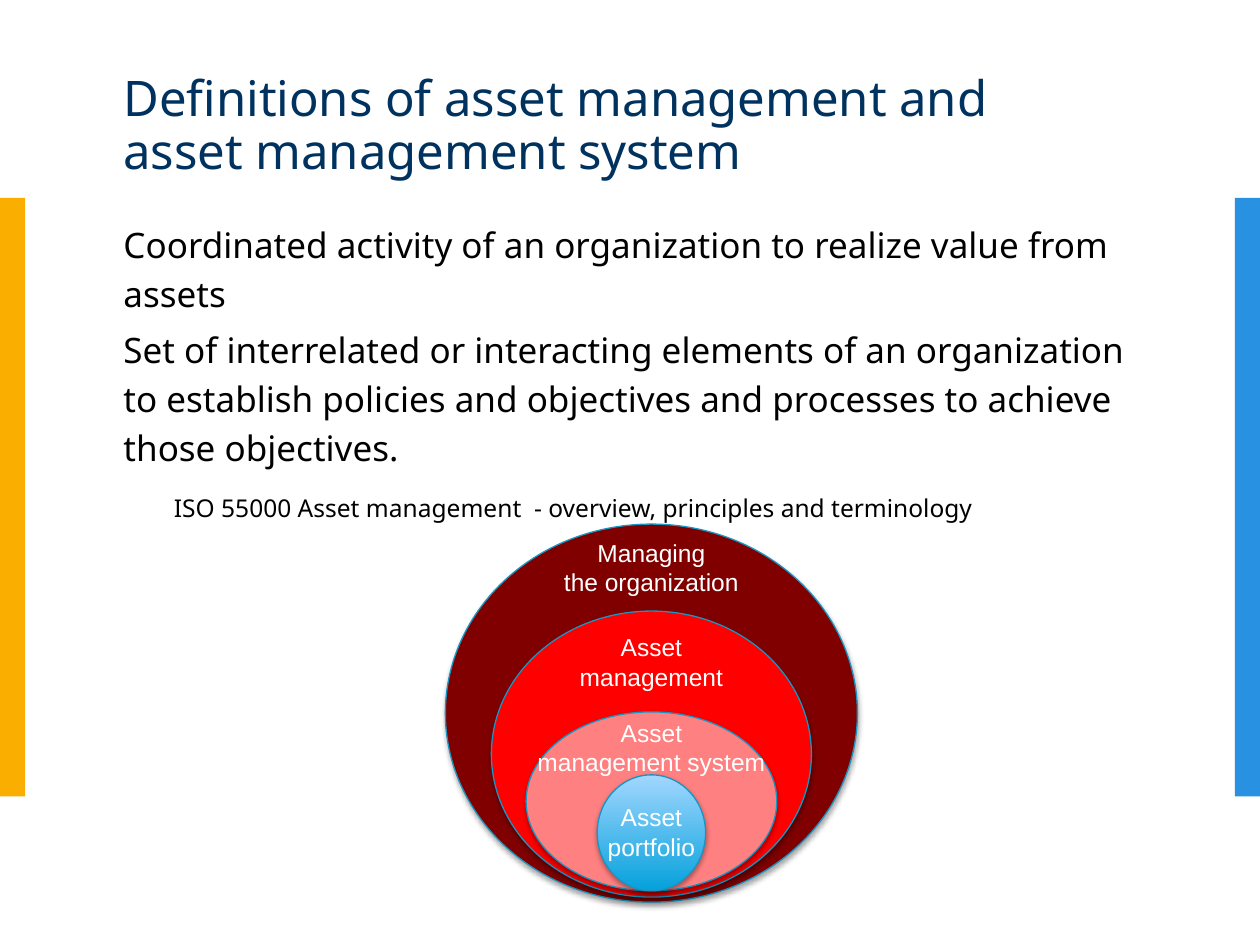
from lxml import etree
from pptx import Presentation
from pptx.dml.color import RGBColor
from pptx.enum.shapes import MSO_SHAPE
from pptx.enum.text import MSO_ANCHOR, MSO_AUTO_SIZE, PP_ALIGN
from pptx.oxml.ns import qn
from pptx.util import Inches, Pt

RECT, OVAL = MSO_SHAPE.RECTANGLE, MSO_SHAPE.OVAL
TOP, NO_FIT = MSO_ANCHOR.TOP, MSO_AUTO_SIZE.NONE
LEFT, CENTER = PP_ALIGN.LEFT, PP_ALIGN.CENTER

THEME = {
    "font": "Noto Sans", "label_font": "Arial",
    "title": "00325F", "body": "000000", "label": "FFFFFF",
    "outline": "1995C3", "shadow": "000000",
    "title_size": 28, "body_size": 20, "small_size": 14,
}
W, H = 10, 7.5
MARGIN = 0.98
BAR_W, BAR_TOP, BAR_H = 0.2, 1.57, 4.75
CENTER_X = 5.17
LABEL_H = 0.57

TITLE = ["Definitions of asset management and", "asset management system"]
BODY = [
    ("Coordinated activity of an organization to realize value from assets", 0),
    ("Set of interrelated or interacting elements of an organization to establish "
     "policies and objectives and processes to achieve those objectives.", 0),
    ("ISO 55000 Asset management  - overview, principles and terminology", 1),
]
BARS = [(0, "FAAF00"), (W - BAR_W, "2891E1")]
RINGS = [
    (4.16, 3.27, 3, ["800000"]),
    (4.85, 2.54, 2.27, ["FF0000"]),
    (5.65, 1.99, 1.42, ["FF8080"]),
    (6.15, 0.86, 0.92, ["05A1DC", "A2D7FF"]),
]
LABELS = [
    (4.22, 1.68, ["Managing", "the organization"]),
    (4.97, 1.42, ["Asset", "management"]),
    (5.65, 2.19, ["Asset", "management system"]),
    (6.32, 1.28, ["Asset", "portfolio"]),
]


def rgb(name):
    return RGBColor.from_string(THEME.get(name, name))


def box(*lengths):
    return [Inches(v) for v in lengths]


def place(sp, *lengths):
    sp.left, sp.top, sp.width, sp.height = box(*lengths)
    tf = sp.text_frame
    tf.margin_left = tf.margin_right = tf.margin_top = tf.margin_bottom = 0
    tf.word_wrap, tf.auto_size, tf.vertical_anchor = True, NO_FIT, TOP
    return tf


def write(p, lines, font, size, color, align):
    p.alignment = align
    for i, line in enumerate(lines):
        if i:
            p.add_line_break()
        r = p.add_run()
        r.text = line
        r.font.name, r.font.size = font, Pt(size)
        r.font.color.rgb = rgb(color)


def add_shape(s, kind, lengths, colors):
    sp = s.shapes.add_shape(kind, *box(*lengths))
    sp.shadow.inherit = False
    if len(colors) == 1:
        sp.fill.solid()
        sp.fill.fore_color.rgb = rgb(colors[0])
    else:
        sp.fill.gradient()
        sp.fill.gradient_angle = 90
        for stop, color in zip(sp.fill.gradient_stops, colors):
            stop.color.rgb = rgb(color)
    sp.line.fill.background()
    return sp


def add_shadow(sp):
    effects = sp._element.spPr.find(qn("a:effectLst"))
    shadow = etree.SubElement(effects, qn("a:outerShdw"), blurRad=str(Pt(3.1)),
                              dist=str(Pt(1.8)), dir="5400000", rotWithShape="0")
    color = etree.SubElement(shadow, qn("a:srgbClr"), val=THEME["shadow"])
    etree.SubElement(color, qn("a:alpha"), val="35000")


def add_body(tf):
    for i, (text, level) in enumerate(BODY):
        p = tf.paragraphs[0] if i == 0 else tf.add_paragraph()
        size = THEME["small_size" if level else "body_size"]
        p.level = level
        pPr = p._p.get_or_add_pPr()
        pPr.set("marL", str(Inches(0.4 * level)))
        pPr.set("indent", "0")
        etree.SubElement(pPr, qn("a:buNone"))
        p.line_spacing = Pt(28)
        p.space_before = Pt(0.2 * size if i else 0)
        write(p, [text], THEME["font"], size, "body", LEFT)


def main():
    prs = Presentation()
    prs.slide_width, prs.slide_height = box(W, H)
    s = prs.slides.add_slide(prs.slide_layouts[1])

    for x, color in BARS:
        add_shape(s, RECT, (x, BAR_TOP, BAR_W, BAR_H), [color])

    p = place(s.shapes.title, MARGIN, 0.59, 8.8, 0.79).paragraphs[0]
    p.line_spacing = 0.9
    write(p, TITLE, THEME["font"], THEME["title_size"], "title", LEFT)
    add_body(place(s.placeholders[1], MARGIN, 1.72, 8.21, 4.6))

    for top, w, h, colors in RINGS:
        sp = add_shape(s, OVAL, (CENTER_X - w / 2, top, w, h), colors)
        sp.line.color.rgb = rgb("outline")
        sp.line.width = Pt(0.75)
        add_shadow(sp)

    for top, w, lines in LABELS:
        tf = s.shapes.add_textbox(*box(CENTER_X - w / 2, top, w, LABEL_H)).text_frame
        tf.word_wrap = True
        write(tf.paragraphs[0], lines, THEME["label_font"], THEME["small_size"],
              "label", CENTER)

    prs.save("out.pptx")


if __name__ == "__main__":
    main()
